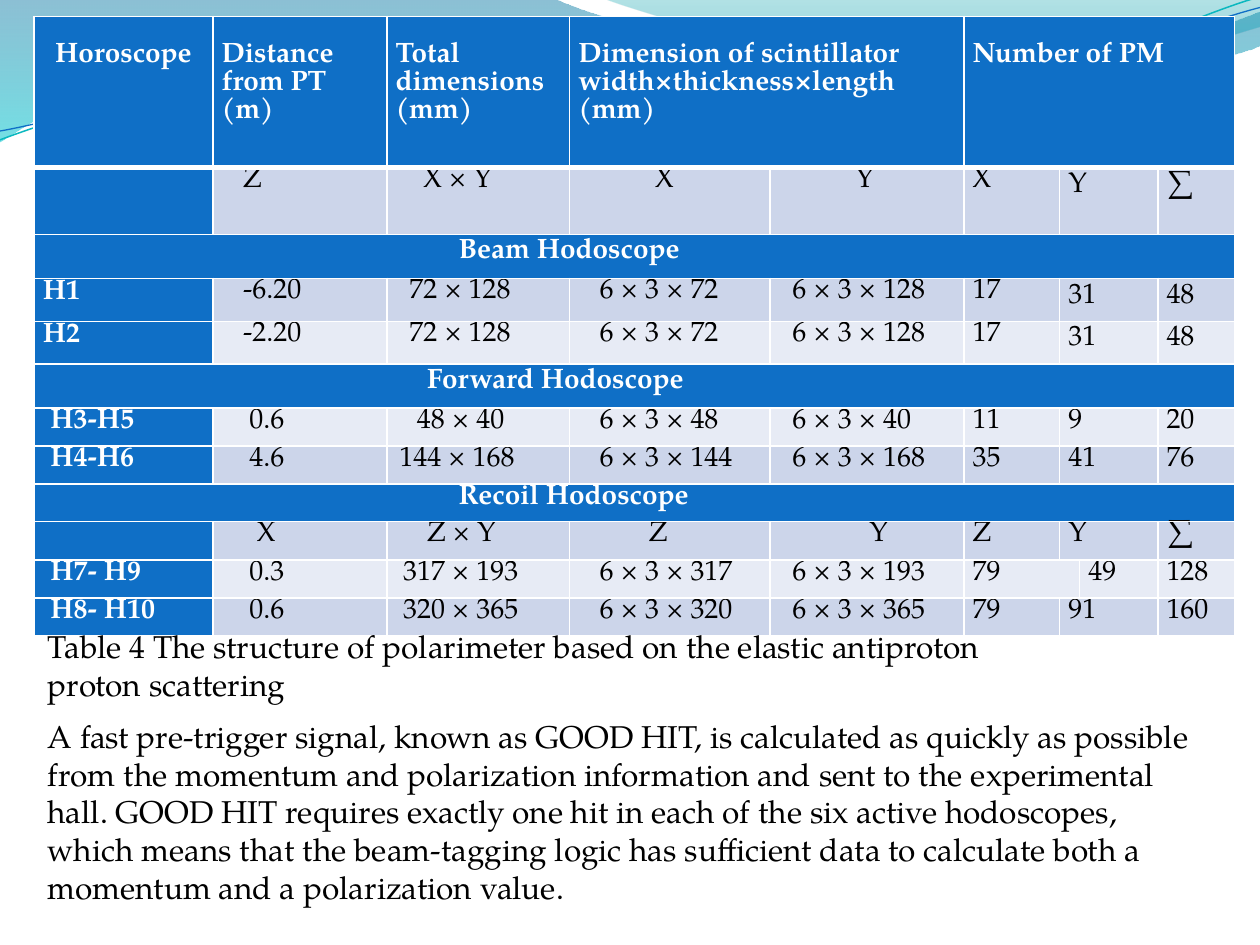
import math
from dataclasses import dataclass

import pptx
import pptx.dml.color
import pptx.enum.text
import pptx.oxml
import pptx.oxml.ns
import pptx.util

Inches, Pt = pptx.util.Inches, pptx.util.Pt
RGB = pptx.dml.color.RGBColor.from_string
ALIGN = pptx.enum.text.PP_ALIGN
A_NS = pptx.oxml.ns.nsdecls("a")
qn = pptx.oxml.ns.qn


@dataclass(frozen=True)
class Theme:
    font: str = "TeX Gyre Pagella"
    blue: str = "0F6FC6"
    teal: str = "0AB8BF"
    white: str = "FFFFFF"
    black: str = "000000"
    bands: tuple = ("E7EBF5", "CCD5EA")
    cell_size: int = 16
    body_size: int = 18


def write(tf, text, *, size, font, color, bold=False, align=ALIGN.LEFT, spacing=None, indent=0):
    """Fill a text frame, one paragraph for each line of text."""
    for i, line in enumerate(text.split("\n")):
        p = tf.paragraphs[0] if i == 0 else tf.add_paragraph()
        p.alignment = align
        if spacing:
            p.line_spacing = spacing
        if indent:
            p._p.get_or_add_pPr().set("marL", str(Inches(indent)))
            p._p.get_or_add_pPr().set("indent", "0")
        if line:
            r = p.add_run()
            r.text = line
            r.font.size, r.font.name, r.font.bold = Pt(size), font, bold
            r.font.color.rgb = RGB(color)


def turn(pt, center, degrees):
    c, s = math.cos(math.radians(degrees)), math.sin(math.radians(degrees))
    dx, dy = pt[0] - center[0], pt[1] - center[1]
    return center[0] + dx * c - dy * s, center[1] + dx * s + dy * c


class Deck:
    def __init__(self, prs, theme):
        self.theme = theme
        self.s = prs.slides.add_slide(prs.slide_layouts[6])

    def outline(self, start, segments, close):
        """Draw lines (one point) and cubic curves (two controls and an end)."""
        builder = self.s.shapes.build_freeform(*map(Inches, start), scale=1.0)
        builder.add_line_segments(
            [tuple(map(Inches, pt)) for seg in segments for pt in seg], close=close)
        sp = builder.convert_to_shape()
        sp.shadow.inherit = False
        lines = iter(list(sp._element.iter(qn("a:lnTo"))))
        for seg in segments:
            parts = [next(lines) for _ in seg]
            if len(parts) == 3:
                curve = pptx.oxml.parse_xml(f"<a:cubicBezTo {A_NS}/>")
                parts[0].addprevious(curve)
                for part in parts:
                    curve.append(part[0])
                    part.getparent().remove(part)
        return sp

    def wave(self, start, segments, stops):
        """Draw a closed shape with a see-through gradient from top to bottom."""
        sp = self.outline(start, segments, True)
        sp.line.fill.background()
        sp.fill.gradient()
        sp.fill.gradient_angle = 270
        for stop, (position, color, _) in zip(sp.fill.gradient_stops, stops):
            stop.position = position
            stop.color.rgb = RGB(color)
        for clr, (_, _, alpha) in zip(sp._element.spPr.iter(qn("a:srgbClr")), stops):
            clr.append(pptx.oxml.parse_xml(f'<a:alpha {A_NS} val="{alpha * 1000}"/>'))

    def ribbon(self, start, segments, center, color, width, rotation=357.3):
        """Draw an open curve, given by its points after rotation."""
        level = [[turn(pt, center, -rotation) for pt in seg] for seg in segments]
        sp = self.outline(turn(start, center, -rotation), level, False)
        sp.rotation = rotation
        sp.fill.background()
        sp.line.color.rgb = RGB(color)
        sp.line.width = Pt(width)

    def text(self, left, top, width, height, text):
        tf = self.s.shapes.add_textbox(*map(Inches, (left, top, width, height))).text_frame
        tf.word_wrap = True
        tf.auto_size = pptx.enum.text.MSO_AUTO_SIZE.SHAPE_TO_FIT_TEXT
        write(tf, text, size=self.theme.body_size, font=self.theme.font, color=self.theme.black)

    def table(self, left, top, cols, rows):
        shape = self.s.shapes.add_table(len(rows), len(cols), *map(
            Inches, (left, top, sum(cols), sum(rows))))
        table = shape.table
        for col, width in zip(table.columns, cols):
            col.width = Inches(width)
        for row, height in zip(table.rows, rows):
            row.height = Inches(height)
        for r in range(len(rows)):
            for c in range(len(cols)):
                self.style_cell(table.cell(r, c), r, c)
        return table

    def style_cell(self, cell, row, col):
        cell.margin_left = cell.margin_right = Inches(0.07)
        cell.margin_top = Inches(0.2) if row == 0 else 0
        cell.margin_bottom = 0
        for side in "LRTB":
            thick = (row, side) in ((0, "B"), (1, "T"))
            cell._tc.get_or_add_tcPr().append(pptx.oxml.parse_xml(
                f'<a:ln{side} {A_NS} w="{Pt(3 if thick else 1)}"><a:solidFill>'
                f'<a:srgbClr val="{self.theme.white}"/></a:solidFill></a:ln{side}>'))
        cell.fill.solid()
        heading = row == 0 or col == 0 or row in BANNERS
        cell.fill.fore_color.rgb = RGB(self.theme.blue if heading else self.theme.bands[row % 2])
        cell.text_frame.paragraphs[0].line_spacing = Pt(self.theme.cell_size)

    def fill_cell(self, table, row, col, text, span=1, indent=0, heading=False,
                  loose=False, align=ALIGN.LEFT):
        cell = table.cell(row, col)
        if span > 1:
            cell.merge(table.cell(row, col + span - 1))
        th = self.theme
        write(cell.text_frame, text, size=th.cell_size, font=th.font, bold=heading,
              color=th.white if heading else th.black, align=align, indent=indent,
              spacing=1.15 if loose else Pt(th.cell_size))


COLS = (1.42, 1.38, 1.45, 1.59, 1.54, 0.76, 0.16, 0.62, 0.61)
ROWS = (1.2, 0.53, 0.35, 0.34, 0.34, 0.35) + (0.3,) * 6
HEADER = (  # column, span, text
    (0, 1, "Horoscope"), (1, 1, "Distance from PT\n(m)"), (2, 1, "Total dimensions (mm)"),
    (3, 2, "Dimension of scintillator\nwidth×thickness×length\n(mm)"), (5, 4, "Number of PM"))
BANNERS = {2: ("Beam Hodoscope", 3.3), 5: ("Forward Hodoscope", 3.05), 8: ("Recoil Hodoscope", 3.3)}
BODY = {  # row: texts, indents of the first five columns
    1: ("|Z|X × Y|X|Y|X|Y|∑", (0, 0.17, 0.22, 0.61, 0.61)),
    3: ("H1|-6.20|72 × 128|6 × 3 × 72|6 × 3 × 128|17|31|48", (0, 0.17, 0.11, 0.17, 0.11)),
    4: ("H2|-2.20|72 × 128|6 × 3 × 72|6 × 3 × 128|17|31|48", (0, 0.17, 0.11, 0.17, 0.11)),
    6: ("H3-H5|0.6|48 × 40|6 × 3 × 48|6 × 3 × 40|11|9|20", (0.06, 0.22, 0.17, 0.17, 0.11)),
    7: ("H4-H6|4.6|144 × 168|6 × 3 × 144|6 × 3 × 168|35|41|76", (0.06, 0.22, 0.03, 0.17, 0.11)),
    9: ("|X|Z × Y|Z|Y|Z|Y|∑", (0, 0.28, 0.25, 0.56, 0.72)),
    10: ("H7- H9|0.3|317 × 193|6 × 3 × 317|6 × 3 × 193|79|49|128", (0.06, 0.22, 0.06, 0.17, 0.11)),
    11: ("H8- H10|0.6|320 × 365|6 × 3 × 320|6 × 3 × 365|79|91|160", (0.06, 0.22, 0.06, 0.17, 0.11)),
}
WIDE_X_ROW = 10  # here the X count, not the Y count, takes the narrow column


def main():
    prs = pptx.Presentation()
    prs.slide_width, prs.slide_height = Inches(10), Inches(7.5)
    th = Theme()
    deck = Deck(prs, th)

    deck.wave((0, 0), [
        [(4.4, -0.01)], [(4.76, 0.17), (6.64, 0.63), (7.58, 0.63)],
        [(8.53, 0.63), (9.58, 0.26), (10, 0.09)], [(10.01, 0.36)],
        [(9.83, 0.44), (8.7, 0.76), (7.46, 0.75)], [(6.22, 0.75), (3.82, 0.28), (2.57, 0.34)],
        [(1.29, 0.36), (0.46, 0.83), (-0.01, 1.13)]], ((0, "0074A1", 45), (1, "00C6CF", 55)))
    deck.wave((4.79, -0.01), [
        [(5.09, 0.11), (6.82, 0.62), (7.69, 0.65)], [(8.56, 0.69), (9.61, 0.32), (10, 0.21)],
        [(10, 0)]], ((0, "00A1A9", 30), (0.8, "008BBF", 45)))
    deck.ribbon((0, 1.11), [
        [(0.48, 0.93), (1.58, 0.57), (2.77, 0.52)], [(3.95, 0.47), (5.93, 0.89), (7.13, 0.8)],
        [(8.33, 0.71), (9.38, 0.15), (9.98, -0.02)]], (4.99, 0.58), th.teal, 0.85)
    deck.ribbon((0, 1.04), [
        [(0.47, 0.96), (1.64, 0.61), (2.83, 0.56)], [(4.03, 0.51), (5.97, 0.84), (7.17, 0.75)],
        [(8.36, 0.67), (9.41, 0.21), (10, 0.06)]], (5, 0.59), th.blue, 0.75)

    table = deck.table(0.27, 0.13, COLS, ROWS)
    for col, span, text in HEADER:
        deck.fill_cell(table, 0, col, text, span, heading=True,
                       align=ALIGN.CENTER if col == 0 else ALIGN.LEFT)
    for row, (text, indent) in BANNERS.items():
        deck.fill_cell(table, row, 0, text, len(COLS), indent, heading=True, loose=row <= 5)
    for row, (line, indents) in BODY.items():
        x_span = 2 if row == WIDE_X_ROW else 1
        places = [(c, 1) for c in range(5)] + [(5, x_span), (5 + x_span, 3 - x_span), (8, 1)]
        for (col, span), text, indent in zip(places, line.split("|"), indents + (0, 0, 0)):
            deck.fill_cell(table, row, col, text, span, indent, heading=col == 0,
                           loose=row <= 5 and col >= 6)

    deck.text(0.28, 4.93, 8.35, 0.71, "Table 4 The structure of polarimeter based on the elastic "
              "antiproton proton scattering")
    deck.text(0.28, 5.64, 9.29, 1.62, "A fast pre-trigger signal, known as GOOD HIT, is calculated "
              "as quickly as possible from the momentum and polarization information and sent to "
              "the experimental hall. GOOD HIT requires exactly one hit in each of the six active "
              "hodoscopes, which means that the beam-tagging logic has sufficient data to "
              "calculate both a momentum and a polarization value.")
    prs.save("out.pptx")


if __name__ == "__main__":
    main()
